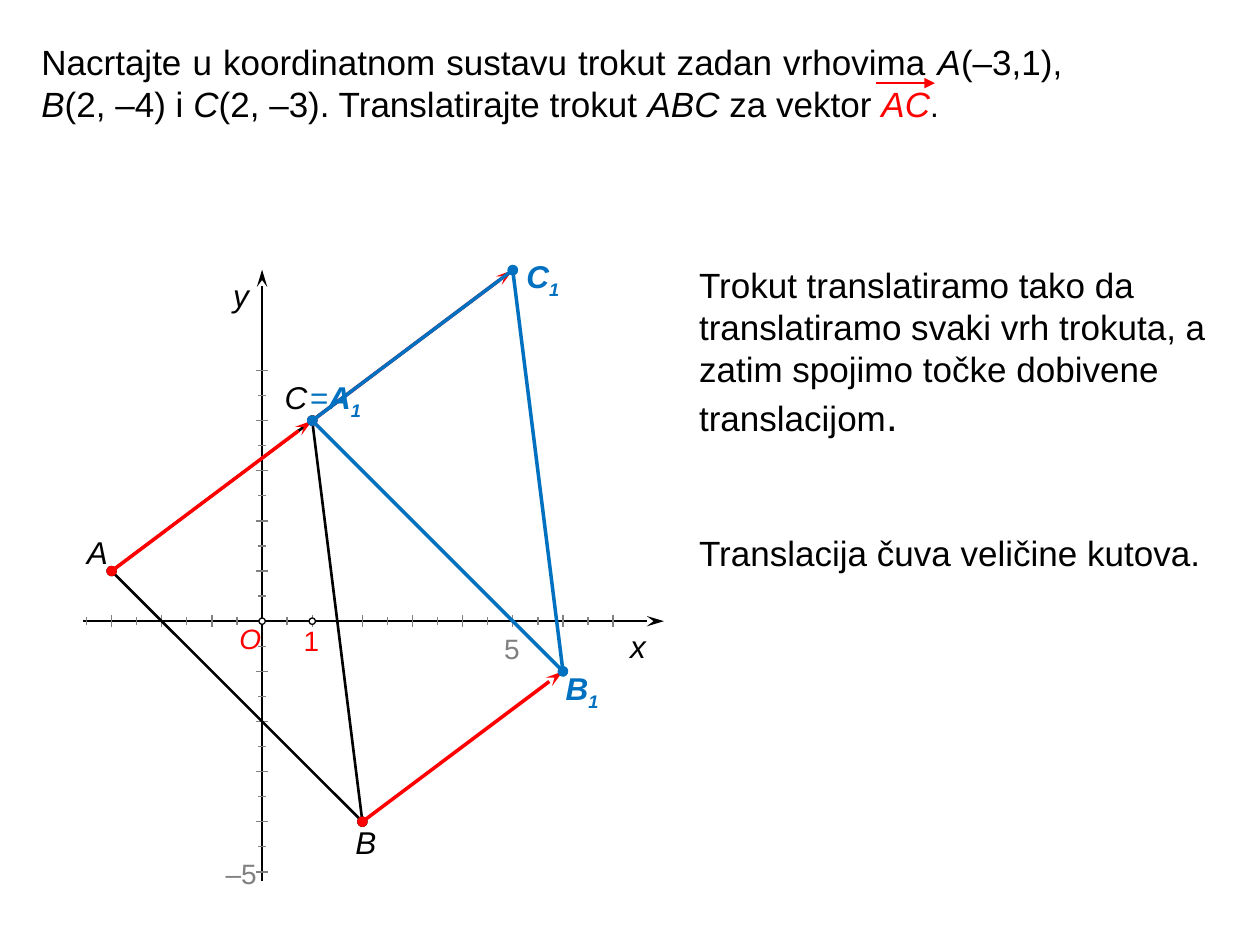
from pptx import Presentation
from pptx.dml.color import RGBColor
from pptx.enum.shapes import MSO_CONNECTOR, MSO_SHAPE
from pptx.enum.text import PP_ALIGN
from pptx.oxml.ns import qn
from pptx.util import Inches, Pt
from lxml.etree import SubElement


class Theme:
    font = "Arial"
    black = RGBColor(0, 0, 0)
    white = RGBColor(255, 255, 255)
    gray = RGBColor(128, 128, 128)
    red = RGBColor(255, 0, 0)
    blue = RGBColor(0, 112, 192)
    body, name, mark = 20, 18, 16
    full_stop = 24


class Plane:
    """Maps points of the coordinate plane to inches on the slide."""
    left, top, unit = 2.08, 4.93, 0.398

    def at(self, x, y):
        return self.left + x * self.unit, self.top - y * self.unit


class Board:
    def __init__(self, slide, theme):
        self.slide = slide
        self.theme = theme

    def line(self, start, end, color, width, head=None, tail=None):
        """Head and tail are (type, length) pairs at start and end."""
        ends = [Inches(v) for v in (*start, *end)]
        line = self.slide.shapes.add_connector(MSO_CONNECTOR.STRAIGHT, *ends)
        line.line.color.rgb = color
        line.line.width = Pt(width)
        ln = line.line._get_or_add_ln()
        for tag, tip in (("a:headEnd", head), ("a:tailEnd", tail)):
            if tip:
                SubElement(ln, qn(tag), type=tip[0], w="med", len=tip[1])
        SubElement(line._element.spPr, qn("a:effectLst"))

    def dot(self, point, size=0.05):
        x, y = point
        dot = self.slide.shapes.add_shape(
            MSO_SHAPE.OVAL, Inches(x - size / 2), Inches(y - size / 2),
            Inches(size), Inches(size))
        dot.shadow.inherit = False
        dot.fill.solid()
        dot.fill.fore_color.rgb = self.theme.white
        dot.line.color.rgb = self.theme.black
        dot.line.width = Pt(0)

    def text(self, box, runs, size, color, bold=None, italic=None,
             align=PP_ALIGN.LEFT, tight=False):
        """Each run is its text and a dict of what differs from the paragraph."""
        shape = self.slide.shapes.add_textbox(*[Inches(v) for v in box])
        frame = shape.text_frame
        frame.word_wrap = not tight
        if tight:
            frame.margin_left = frame.margin_right = 0
            frame.margin_top = frame.margin_bottom = 0
        para = frame.paragraphs[0]
        para.alignment = align
        font = para.font
        font.name, font.size, font.color.rgb = self.theme.font, Pt(size), color
        font.bold, font.italic = bold, italic
        for words, style in runs:
            run = para.add_run()
            run.text = words
            if "size" in style:
                run.font.size = Pt(style["size"])
            if "color" in style:
                run.font.color.rgb = style["color"]
            if "bold" in style:
                run.font.bold = style["bold"]
            if "italic" in style:
                run.font.italic = style["italic"]
            if "sub" in style:
                run.font._element.set("baseline", "-25000")

    def label(self, box, words, size, color, italic=None):
        self.text(box, [(words, {})], size, color, italic=italic, tight=True)

    def tick(self, point, upright, long):
        x, y = point
        half = 0.05 if long else 0.03
        dx, dy = (0, half) if upright else (half, 0)
        self.line((x - dx, y - dy), (x + dx, y + dy), self.theme.gray, 0.75)


def axes(board, plane):
    theme = board.theme
    tip = ("stealth", "lg")
    board.line((0.66, plane.top), (5.27, plane.top), theme.black, 1.5, tail=tip)
    for n in range(-7, 15):
        if n:
            board.tick(plane.at(n / 2, 0), True, n % 2 == 0)
    board.line((plane.left, 2.14), (plane.left, 6.99), theme.black, 1.25, head=tip)
    for n in range(-10, 11):
        if n:
            board.tick(plane.at(0, n / 2), False, n % 2 == 0)
    board.label((4, 5.01, 0.22, 0.3), "5", theme.mark, theme.gray)
    board.label((1.79, 6.8, 0.25, 0.27), "–5", theme.mark, theme.gray)
    board.label((5, 4.98, 0.12, 0.3), "x", theme.name, theme.black, True)
    board.label((1.85, 2.19, 0.13, 0.3), "y", theme.name, theme.black, True)


def main():
    deck = Presentation()
    deck.slide_width, deck.slide_height = Inches(10), Inches(7.5)
    theme, plane = Theme(), Plane()
    board = Board(deck.slides.add_slide(deck.slide_layouts[6]), theme)
    slant = {"italic": True}
    oval, tip = ("oval", "med"), ("stealth", "lg")

    board.text((0.23, 0.27, 8.3, 0.77), [
        ("Nacrtajte u koordinatnom sustavu trokut zadan vrhovima ", {}),
        ("A", slant), ("(–3,1), ", {}), ("B", slant), ("(2, –4) i ", {}),
        ("C", slant), ("(2, –3). Translatirajte trokut ", {}),
        ("ABC", slant), (" za vektor ", {}),
        ("AC", {"italic": True, "color": theme.red}),
        (".", {"size": theme.name}),
    ], theme.body, theme.black, align=PP_ALIGN.JUSTIFY)

    axes(board, plane)

    a, b, c = plane.at(-3, 1), plane.at(2, -4), plane.at(1, 4)
    b1, c1 = plane.at(6, -1), plane.at(5, 7)
    for start, end in ((a, b), (b, c), (c, a)):
        board.line(start, end, theme.black, 1.5, oval, oval)
    for point in (a, b, c, plane.at(1, 0), plane.at(0, 0)):
        board.dot(point)
    for words, box in (("A", (0.69, 4.23, 0.17, 0.3)),
                       ("B", (2.82, 6.53, 0.17, 0.3)),
                       ("C", (2.26, 3, 0.25, 0.3))):
        board.label(box, words, theme.name, theme.black, True)

    for start, end in ((a, c), (c, c1), (b, b1)):
        board.line(end, start, theme.red, 2, tip, oval)
    for box, runs in (
            ((4.39, 5.26, 0.8, 0.4), [("B", {})]),
            ((4.08, 1.99, 0.8, 0.4), [("C", {})]),
            ((2.36, 2.95, 0.83, 0.4), [("=", {"bold": False}), ("A", {})])):
        board.text(box, runs + [("1", {"sub": True})], theme.name, theme.blue,
                   bold=True, italic=True)
    for start, end in ((b1, c1), (c1, c), (c, b1)):
        board.line(start, end, theme.blue, 2, oval, oval)

    board.label((1.9, 4.93, 0.18, 0.27), "O", theme.mark, theme.red, True)
    board.label((2.41, 4.95, 0.12, 0.27), "1", theme.mark, theme.red)

    board.text((5.45, 2.04, 4.23, 1.53), [
        ("Trokut translatiramo tako da translatiramo svaki vrh trokuta, "
         "a zatim spojimo točke dobivene translacijom", {}),
        (".", {"size": theme.full_stop}),
    ], theme.body, theme.black)
    board.text((5.45, 4.17, 4.23, 0.44),
               [("Translacija čuva veličine kutova.", {})],
               theme.body, theme.black)
    board.line((6.95, 0.66), (7.42, 0.66), theme.red, 1.5,
               tail=("triangle", "med"))
    deck.save("out.pptx")


if __name__ == "__main__":
    main()
